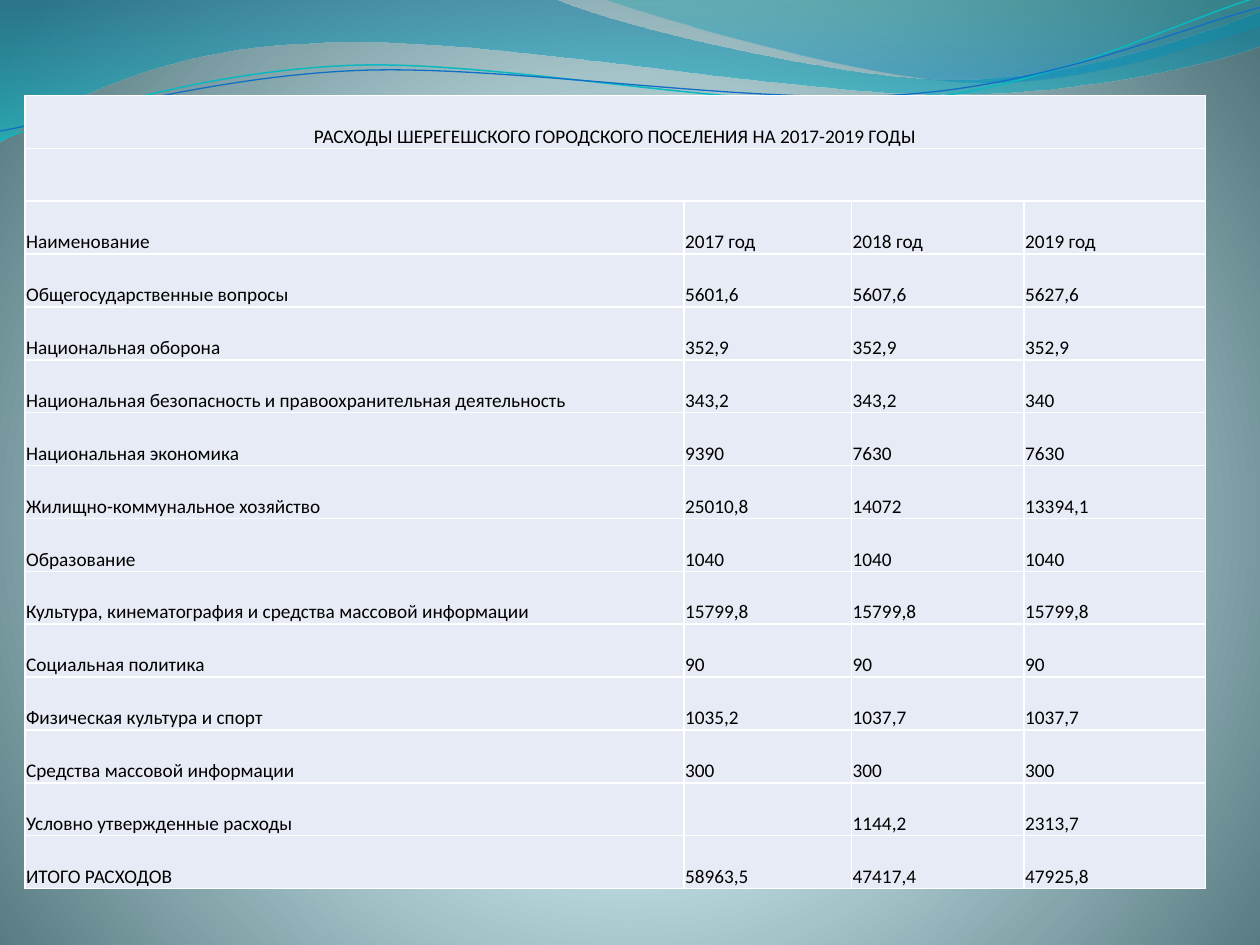
from math import cos, radians, sin

from lxml import etree
from pptx import Presentation
from pptx.dml.color import RGBColor
from pptx.enum.text import MSO_ANCHOR, PP_ALIGN
from pptx.oxml import parse_xml
from pptx.util import Pt

BOTTOM, CENTER = MSO_ANCHOR.BOTTOM, PP_ALIGN.CENTER
NS = "http://schemas.openxmlformats.org/drawingml/2006/main"
FONT = "Calibri"
TILT = -2.7
COLORS = {
    "pale": "DEFBFF", "ice": "DDFAFF", "slate": "52767C",
    "blue": "0074A1", "aqua": "00C6CF", "teal": "00A1A9", "sea": "008BBF",
    "cyan": "0AB8BF", "royal": "0F6FC6",
    "cell": "E7EBF5", "rule": "FFFFFF", "text": "000000",
}

# Outlines in points: two numbers make a line, six make a curve
BANDS = [
    ([(0, 0), (316.8, -0.7), (342.7, 12.2, 478.1, 45.4, 545.8, 45.4),
      (614.2, 45.4, 689.8, 18.7, 720, 6.5), (720.7, 25.9),
      (707.8, 31.7, 626.4, 54.7, 537.1, 54), (447.8, 54, 275, 20.2, 185, 24.5),
      (92.9, 25.9, 33.1, 59.8, -0.7, 81.4), (0, 0)],
     [(0, "blue", 45), (100, "aqua", 55)]),
    ([(344.9, -0.7), (366.5, 7.9, 491, 44.6, 553.7, 46.8),
      (616.3, 49.7, 691.9, 23, 720, 15.1), (720, 0), (344.9, -0.7)],
     [(0, "teal", 30), (80, "sea", 45)]),
]
# Each line has a middle, around which it is tilted
LINES = [
    ([(0, 79.9), (34.6, 67, 113.8, 41, 199.4, 37.4),
      (284.4, 33.8, 427, 64.1, 513.4, 57.6),
      (599.8, 51.1, 675.4, 10.8, 718.6, -1.4)], (359.3, 41.4), "cyan", 0.85),
    ([(0, 74.9), (33.8, 69.1, 118.1, 43.9, 203.8, 40.3),
      (290.2, 36.7, 429.8, 60.5, 516.2, 54),
      (601.9, 48.2, 677.5, 15.1, 720, 4.3)], (359.6, 42.5), "royal", 0.75),
]

TITLE = "РАСХОДЫ ШЕРЕГЕШСКОГО ГОРОДСКОГО ПОСЕЛЕНИЯ НА 2017-2019 ГОДЫ"
COLS = [376.6, 95.8, 98.6, 103.7]
ROWS = [
    (TITLE, "", "", ""),
    ("", "", "", ""),
    ("Наименование", "2017 год", "2018 год", "2019 год"),
    ("Общегосударственные вопросы", "5601,6", "5607,6", "5627,6"),
    ("Национальная оборона", "352,9", "352,9", "352,9"),
    ("Национальная безопасность и правоохранительная деятельность",
     "343,2", "343,2", "340"),
    ("Национальная экономика", "9390", "7630", "7630"),
    ("Жилищно-коммунальное хозяйство", "25010,8", "14072", "13394,1"),
    ("Образование", "1040", "1040", "1040"),
    ("Культура, кинематография и средства массовой информации",
     "15799,8", "15799,8", "15799,8"),
    ("Социальная политика", "90", "90", "90"),
    ("Физическая культура и спорт", "1035,2", "1037,7", "1037,7"),
    ("Средства массовой информации", "300", "300", "300"),
    ("Условно утвержденные расходы", "", "1144,2", "2313,7"),
    ("ИТОГО РАСХОДОВ", "58963,5", "47417,4", "47925,8"),
]


def color(name):
    return RGBColor.from_string(COLORS[name])


def set_blend(fill, owner, stops, shade):
    """Gradient fill from (position, colour, opacity) stops."""
    marks = "".join(
        f'<a:gs pos="{pos * 1000}"><a:srgbClr val="{COLORS[name]}">'
        f'<a:alpha val="{solid * 1000}"/></a:srgbClr></a:gs>'
        for pos, name, solid in stops)
    fill.solid()
    old = owner.find(f".//{{{NS}}}solidFill")
    old.getparent().replace(old, parse_xml(
        f'<a:gradFill xmlns:a="{NS}" rotWithShape="1">'
        f'<a:gsLst>{marks}</a:gsLst>{shade}</a:gradFill>'))


def spin(dot, mid, angle):
    x, y = dot[0] - mid[0], dot[1] - mid[1]
    c, s = cos(radians(angle)), sin(radians(angle))
    return mid[0] + x * c - y * s, mid[1] + x * s + y * c


def draw(shapes, box, steps, close, mid=(0, 0), tilt=0):
    left, top = box[:2]
    dots = [spin(step[i:i + 2], mid, -tilt)
            for step in steps for i in range(0, len(step), 2)]
    dots = [(Pt(left + x), Pt(top + y)) for x, y in dots]
    pen = shapes.build_freeform(*dots[0])
    pen.add_line_segments(dots[1:], close=close)
    shape = pen.convert_to_shape()
    # Join each three segments of a curve into one Bezier
    parts = iter(list(shape.element.iter(f"{{{NS}}}lnTo")))
    for step in steps[1:]:
        first = next(parts)
        if len(step) == 6:
            curve = etree.Element(f"{{{NS}}}cubicBezTo")
            first.addprevious(curve)
            for part in (first, next(parts), next(parts)):
                curve.append(part[0])
                part.getparent().remove(part)
    shape.rotation = tilt
    shape.shadow.inherit = False
    return shape


def add_back(slide):
    set_blend(slide.background.fill, slide.element,
              [(0, "pale", 100), (25, "ice", 100), (100, "slate", 100)],
              '<a:path path="circle"><a:fillToRect l="10000" t="110000" '
              'r="10000" b="100000"/></a:path>')


def add_waves(slide, box):
    for steps, stops in BANDS:
        band = draw(slide.shapes, box, steps, True)
        band.line.fill.background()
        set_blend(band.fill, band.element.spPr, stops,
                  '<a:lin ang="5400000" scaled="1"/>')
    group = slide.shapes.add_group_shape()
    for steps, mid, name, width in LINES:
        curve = draw(group.shapes, box, steps, False, mid, TILT)
        curve.fill.background()
        curve.line.color.rgb = color(name)
        curve.line.width = Pt(width)


def style_cell(cell, text, align):
    # Borders come before the fill
    props = cell._tc.get_or_add_tcPr()
    for side in ("lnL", "lnR", "lnT", "lnB"):
        edge = etree.SubElement(props, f"{{{NS}}}{side}", w=str(Pt(1)))
        ink = etree.SubElement(edge, f"{{{NS}}}solidFill")
        etree.SubElement(ink, f"{{{NS}}}srgbClr", val=COLORS["rule"])
    cell.fill.solid()
    cell.fill.fore_color.rgb = color("cell")
    if not text:
        return
    cell.margin_left = cell.margin_right = cell.margin_top = Pt(0.7)
    cell.margin_bottom = Pt(0)
    cell.vertical_anchor = BOTTOM
    para = cell.text_frame.paragraphs[0]
    para.alignment = align
    run = para.add_run()
    run.text = text
    run.font.name = FONT
    run.font.size = Pt(11)
    run.font.color.rgb = color("text")


def add_costs(slide, box):
    left, top, width, height = box
    table = slide.shapes.add_table(len(ROWS), len(COLS), Pt(left), Pt(top),
                                   Pt(width), Pt(height)).table
    table.first_row = table.horz_banding = False
    for col, size in zip(table.columns, COLS):
        col.width = Pt(width * size / sum(COLS))
    for r, texts in enumerate(ROWS):
        table.rows[r].height = Pt(height / len(ROWS))
        for c, text in enumerate(texts):
            style_cell(table.cell(r, c), text, CENTER if r == 0 else None)
    for r in (0, 1):
        table.cell(r, 0).merge(table.cell(r, len(COLS) - 1))


def main():
    deck = Presentation()
    deck.slide_width, deck.slide_height = Pt(720), Pt(540)
    slide = deck.slides.add_slide(deck.slide_layouts[6])
    add_back(slide)
    add_waves(slide, (0, 0, 720, 82))
    add_costs(slide, (14.2, 54.5, 674.7, 453.4))
    deck.save("out.pptx")


if __name__ == "__main__":
    main()
